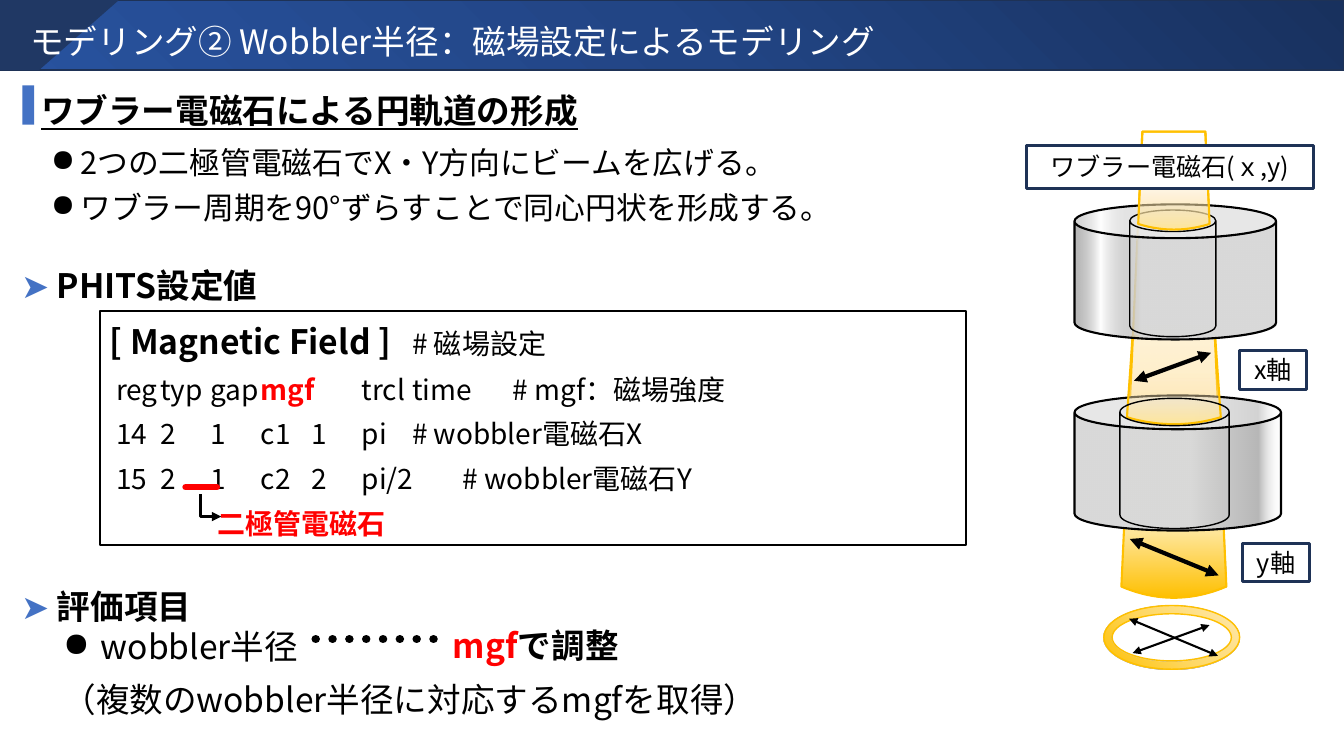
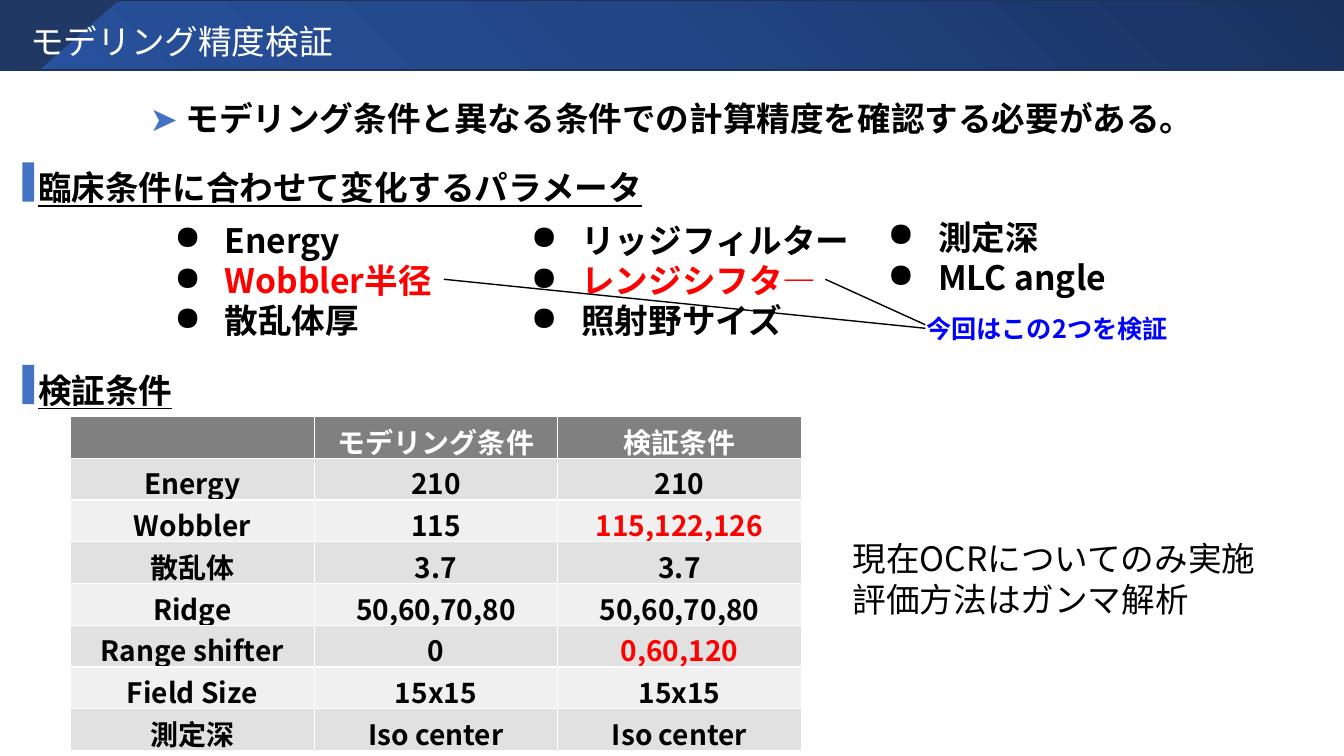
"""Build two slides on wobbler magnet modelling and its accuracy check."""
import pptx
import pptx.dml.color
import pptx.enum.dml
import pptx.enum.shapes
import pptx.enum.text
import pptx.oxml.ns
import pptx.util
from lxml import etree

Pt = pptx.util.Pt
SHAPE = pptx.enum.shapes.MSO_SHAPE
CONNECTOR = pptx.enum.shapes.MSO_CONNECTOR
ALIGN = pptx.enum.text.PP_ALIGN
ANCHOR = pptx.enum.text.MSO_ANCHOR
qn = pptx.oxml.ns.qn

FONT = "Noto Sans CJK JP"
BLACK, WHITE, RED, BLUE, NAVY = "000000", "FFFFFF", "FF0000", "4472C4", "1E3256"
GOLD = "FFC000"
CENTER_X = 838.5

BAND_FILL = ([(0, "18315E"), (50, "224585"), (100, "28529E")], None)
BEAM_FILL = ([(0, GOLD), (14, "FFE699"), (100, "FFE6C5", 0)], 270)
FRONT_FILL = ([(0, "FFE699"), (58, "FFE6C5", 0)], 270)
UPPER_FILL = ([(67, "D9D9D9"), (87, "808080", 0), (100, "B7B7B7")], 180)
LOWER_FILL = ([(0, WHITE, 0), (11, "B7B7B7"), (44, "D9D9D9")], 180)
RING_FILL = ([(0, GOLD), (48, "FFD966"), (92, "FFE7A6"), (100, "FFE6C5", 0)], 315)

ARROW = ("➤ ", {"color": BLUE})
BULLET = {"bullet": "●", "margin": 28, "indent": -21, "size": 22}
ORBIT_POINTS = [
    {"runs": ["2つの二極管電磁石でX・Y方向にビームを広げる。"], "spacing": Pt(30), "before": 6, **BULLET},
    {"runs": ["ワブラー周期を90°ずらすことで同心円状を形成する。"], "spacing": Pt(32), **BULLET},
]
FIELD_SETTINGS = [
    {"runs": [("[ Magnetic Field ]", {"size": 24, "bold": True}), "\t# 磁場設定"], "tabs": [360]},
    {"runs": [" reg\ttyp\tgap\t", ("mgf", {"color": RED, "bold": True}),
              "\ttrcl\ttime\t# mgf：磁場強度"], "tabs": [42, 82, 126, 178, 222, 288]},
    {"runs": [" 14\t2\t1\tc1\t1\tpi\t# wobbler電磁石X"], "tabs": [44, 77, 127, 176, 214, 360]},
    {"runs": [" 15\t2\t1\tc2\t2\tpi/2\t# wobbler電磁石Y"], "tabs": [44, 94, 144, 192, 230, 288]},
    {"runs": ["二極管電磁石"], "margin": 77, "color": RED, "bold": True},
]
EVALUATION = [
    {"runs": [ARROW, ("評価項目", {"bold": True})]},
    {"runs": ["wobbler半径"], "bullet": "●", "margin": 57, "indent": -27},
    {"runs": ["（複数のwobbler半径に対応するmgfを取得）"], "margin": 29.5, "spacing": Pt(38)},
]
MAGNET_LABELS = [
    ("ワブラー電磁石(ｘ,y)", 733, 103.7, 205, 31),
    ("x軸", 885.6, 250.5, 47.5, 27.4),
    ("y軸", 887.8, 388, 47.5, 27.4),
]
PARAMETERS = [
    (117.4, 153.4, ["Energy", "Wobbler半径", "散乱体厚"]),
    (372.2, 153.4, ["リッジフィルター", "レンジシフタ―", "照射野サイズ"]),
    (627, 151.2, ["測定深", "MLC angle"]),
]
CHECKED = {"Wobbler半径", "レンジシフタ―", "115,122,126", "0,60,120"}
CONDITIONS = [
    ("", "モデリング条件", "検証条件"),
    ("Energy", "210", "210"),
    ("Wobbler", "115", "115,122,126"),
    ("散乱体", "3.7", "3.7"),
    ("Ridge", "50,60,70,80", "50,60,70,80"),
    ("Range shifter", "0", "0,60,120"),
    ("Field Size", "15x15", "15x15"),
    ("測定深", "Iso center", "Iso center"),
]


def rgb(color):
    return pptx.dml.color.RGBColor.from_string(color)


def child(parent, tag, **attributes):
    node = etree.SubElement(parent, qn(tag))
    for name, value in attributes.items():
        node.set(name, str(value))
    return node


def add_gradient(shape, stops, angle):
    shape.fill.gradient()
    gradient = shape.element.spPr.find(qn("a:gradFill"))
    for node in list(gradient):
        gradient.remove(node)
    stop_list = child(gradient, "a:gsLst")
    for position, color, *alpha in stops:
        stop = child(stop_list, "a:gs", pos=position * 1000)
        tint = child(stop, "a:srgbClr", val=color)
        for opacity in alpha:
            child(tint, "a:alpha", val=opacity * 1000)
    if angle is None:
        circle = child(gradient, "a:path", path="circle")
        child(circle, "a:fillToRect", l=100000, b=100000)
    else:
        child(gradient, "a:lin", ang=angle * 60000, scaled=0)


def paint(shape, fill=None, line=None, weight=1):
    shape.shadow.inherit = False
    if fill is None:
        shape.fill.background()
    elif isinstance(fill, str):
        shape.fill.solid()
        shape.fill.fore_color.rgb = rgb(fill)
    else:
        add_gradient(shape, *fill)
    if line is None:
        shape.line.fill.background()
    else:
        shape.line.color.rgb = rgb(line)
        shape.line.width = Pt(weight)
    return shape


def add_shape(page, kind, left, top, width, height, **look):
    shape = page.shapes.add_shape(kind, Pt(left), Pt(top), Pt(width), Pt(height))
    return paint(shape, **look)


def add_outline(page, points, **look):
    start, *others = [(x * 100, y * 100) for x, y in points]
    builder = page.shapes.build_freeform(*start, scale=Pt(1) / 100)
    builder.add_line_segments(others, close=True)
    return paint(builder.convert_to_shape(), **look)


def add_line(page, start, end, weight=1, color=BLACK, kind=CONNECTOR.STRAIGHT, ends=(), cap="flat"):
    line = page.shapes.add_connector(kind, *map(Pt, start + end))
    line.line.color.rgb = rgb(color)
    line.line.width = Pt(weight)
    stroke = line.element.spPr.find(qn("a:ln"))
    stroke.set("cap", cap)
    for tag in ends:
        child(stroke, tag, type="triangle")
    child(line.element.spPr, "a:effectLst")
    return line


def set_font(font, size=None, bold=None, underline=None, color=None):
    for name, value in (("bold", bold), ("underline", underline)):
        if value is not None:
            setattr(font, name, value)
    if size:
        font.size = Pt(size)
    if color:
        font.color.rgb = rgb(color)


def write(frame, paragraphs, align=None, **base):
    """Fill a text frame from paragraph dicts, whose keys override the base style."""
    frame.word_wrap = True
    for index, item in enumerate(paragraphs):
        style = {"size": 24, "color": BLACK, "bold": False, **base, **item}
        para = frame.add_paragraph() if index else frame.paragraphs[0]
        if align is not None:
            para.alignment = align
        para.line_spacing = style.pop("spacing", None)
        if "before" in style:
            para.space_before = Pt(style.pop("before"))
        properties = para._p.get_or_add_pPr()
        properties.set("marL", str(Pt(style.pop("margin", 0))))
        properties.set("indent", str(Pt(style.pop("indent", 0))))
        if "bullet" in style:
            child(child(properties, "a:buClr"), "a:srgbClr", val=BLACK)
            child(properties, "a:buChar", char=style.pop("bullet"))
        else:
            child(properties, "a:buNone")
        if "tabs" in style:
            stops = child(properties, "a:tabLst")
            for position in style.pop("tabs"):
                child(stops, "a:tab", pos=Pt(position), algn="l")
        runs = style.pop("runs")
        set_font(para.font, **style)
        para.font.name = FONT
        child(properties.find(qn("a:defRPr")), "a:ea", typeface=FONT)
        for run in runs:
            text, change = (run, {}) if isinstance(run, str) else run
            span = para.add_run()
            span.text = text
            set_font(span.font, **change)


def add_text(page, left, top, width, height, paragraphs, **style):
    box = page.shapes.add_textbox(Pt(left), Pt(top), Pt(width), Pt(height))
    write(box.text_frame, paragraphs, **style)


def add_heading(page, text, left, top, width, height, points=()):
    add_shape(page, SHAPE.RECTANGLE, 16, top, 8.5, 28, fill=BLUE)
    title = {"runs": [text], "bold": True, "underline": True}
    add_text(page, left, top, width, height, [title, *points])


def add_page(deck, title):
    page = deck.slides.add_slide(deck.slide_layouts[5])
    add_shape(page, SHAPE.RECTANGLE, 0, 0, 960, 50, fill=BAND_FILL, line=NAVY)
    add_outline(page, [(0, 0), (85, 0), (28, 50), (0, 50)], fill="203864")
    holder = page.shapes.title
    holder.left, holder.top, holder.width, holder.height = map(Pt, (0, 6.5, 833, 36))
    frame = holder.text_frame
    frame.margin_left = frame.margin_right = Pt(7.2)
    frame.margin_top, frame.margin_bottom = Pt(8.6), Pt(3.6)
    frame.vertical_anchor = ANCHOR.TOP
    write(frame, [{"runs": [title], "margin": 14.4}], align=ALIGN.LEFT, color=WHITE)
    page.shapes.element.append(holder.element)
    return page


def add_beam(page, top, bottom, top_half, bottom_half, dip, fill):
    steps = [step / 10 for step in range(10, -11, -1)]
    curve = [(CENTER_X + bottom_half * t, bottom + dip * (1 - t * t)) for t in steps]
    corners = [(CENTER_X - top_half, top), (CENTER_X + top_half, top)]
    add_outline(page, corners + curve, fill=fill, line=GOLD, weight=1.5)


def add_magnets(page):
    both = ("a:headEnd", "a:tailEnd")
    add_beam(page, 94, 419, 22.5, 37.5, 8, BEAM_FILL)
    add_shape(page, SHAPE.CAN, 767.5, 282.5, 147.5, 96.5, fill=LOWER_FILL, line=BLACK, weight=1.5)
    add_beam(page, 240, 298, 29.5, 33.5, 5, FRONT_FILL)
    add_shape(page, SHAPE.CAN, 800, 284.5, 78, 93, line=BLACK)
    add_line(page, (810, 272), (865, 252), 3, ends=both)
    add_line(page, (807, 385), (870.5, 411), 3, ends=both)
    add_shape(page, SHAPE.CAN, 767.5, 146, 144, 96.5, fill=UPPER_FILL, line=BLACK, weight=1.5)
    add_shape(page, SHAPE.CAN, 807, 150, 61.5, 90.5, line=BLACK)
    add_beam(page, 94, 160, 22.5, 25.5, 4, FRONT_FILL)
    for text, *place in MAGNET_LABELS:
        label = add_shape(page, SHAPE.FLOWCHART_PROCESS, *place, fill=WHITE, line=NAVY, weight=2.25)
        label.text_frame.vertical_anchor = ANCHOR.MIDDLE
        write(label.text_frame, [{"runs": [text]}], align=ALIGN.CENTER, size=18)
    ring = add_shape(page, SHAPE.DONUT, 788.5, 432.5, 97, 45.5, fill=RING_FILL, line=GOLD)
    ring.adjustments[0] = 0.13
    add_line(page, (809, 466.5), (864, 446.5), 1.5, ends=both)
    add_line(page, (806.5, 442), (870, 468.5), 1.5, ends=both)


def build_wobbler(deck):
    page = add_page(deck, "モデリング② Wobbler半径：磁場設定によるモデリング")
    add_magnets(page)
    add_heading(page, "ワブラー電磁石による円軌道の形成", 22.3, 61, 695, 104, ORBIT_POINTS)
    add_text(page, 8, 186, 263, 36, [{"runs": [ARROW, "PHITS設定値"], "bold": True}])
    field = add_shape(page, SHAPE.RECTANGLE, 71.3, 222.3, 618.5, 167, line=BLACK, weight=1.5)
    field.text_frame.vertical_anchor = ANCHOR.TOP
    write(field.text_frame, FIELD_SETTINGS, align=ALIGN.LEFT, size=20, spacing=Pt(32))
    add_line(page, (132.5, 348), (155, 348), 4.5, RED, cap="rnd")
    elbow = add_line(page, (143, 353), (158, 369), 2.25, kind=CONNECTOR.ELBOW, ends=("a:tailEnd",))
    guides = elbow.element.spPr.find(qn("a:prstGeom")).get_or_add_avLst()
    child(guides, "a:gd", name="adj1", fmla="val 0")
    add_text(page, 8, 414.7, 572, 101.5, EVALUATION)
    add_text(page, 311, 442.8, 158.5, 27.4,
             [{"runs": [" ", ("mgf", {"color": RED}), "で調整"], "bold": True}])
    dots = add_line(page, (225.5, 456.5), (311, 456.5), 6, cap="rnd")
    dots.line.dash_style = pptx.enum.dml.MSO_LINE.ROUND_DOT


def add_conditions(page):
    rows, columns = len(CONDITIONS), len(CONDITIONS[0])
    frame = page.shapes.add_table(rows, columns, Pt(50.4), Pt(297.5), Pt(522), Pt(29 * rows))
    for row, texts in enumerate(CONDITIONS):
        for column, text in enumerate(texts):
            cell = frame.table.cell(row, column)
            cell.margin_top = cell.margin_bottom = Pt(2.9)
            cell.fill.solid()
            cell.fill.fore_color.rgb = rgb(("F0F0F0", "E1E1E1")[row % 2] if row else "808080")
            color = RED if text in CHECKED else BLACK if row else WHITE
            write(cell.text_frame, [{"runs": [text] if text else []}], align=ALIGN.CENTER,
                  size=20, bold=True, color=color)


def build_accuracy(deck):
    page = add_page(deck, "モデリング精度検証")
    claim = "モデリング条件と異なる条件での計算精度を確認する必要がある。"
    add_text(page, 74, 66.2, 811.5, 36, [{"runs": [ARROW, claim], "bold": True}], align=ALIGN.CENTER)
    add_heading(page, "臨床条件に合わせて変化するパラメータ", 20.2, 116, 543, 44)
    for left, top, names in PARAMETERS:
        items = [{"runs": [name], "color": RED if name in CHECKED else BLACK} for name in names]
        add_text(page, left, top, 255, 29 * len(names) + 7.2, items,
                 bold=True, bullet="●", margin=36, indent=-36)
    add_line(page, (589.5, 199.5), (661, 232))
    add_line(page, (317, 199.5), (661, 234.5))
    add_text(page, 654.5, 220.3, 214, 29, [{"runs": ["今回はこの2つを検証"]}],
             size=18, bold=True, color="0000FF")
    add_conditions(page)
    add_heading(page, "検証条件", 20.2, 260.7, 543, 44)
    add_text(page, 602, 381, 332.5, 65.5,
             [{"runs": ["現在OCRについてのみ実施"]}, {"runs": ["評価方法はガンマ解析"]}])


def main():
    deck = pptx.Presentation()
    deck.slide_width, deck.slide_height = Pt(960), Pt(540)
    build_wobbler(deck)
    build_accuracy(deck)
    deck.save("out.pptx")


if __name__ == "__main__":
    main()
